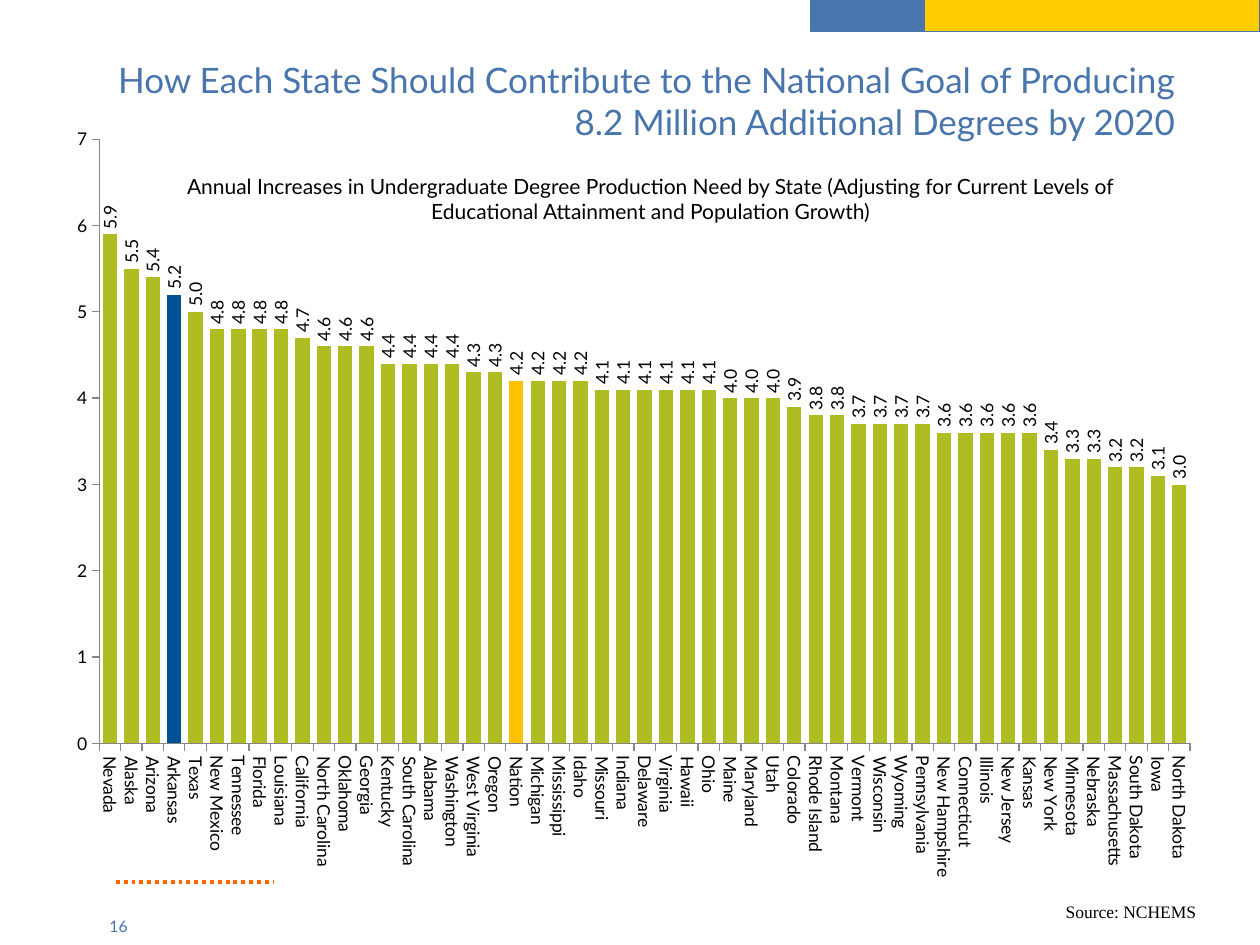
from lxml.etree import SubElement
from pptx import Presentation
from pptx.chart.data import CategoryChartData
from pptx.dml.color import RGBColor
from pptx.enum.chart import XL_CHART_TYPE, XL_LABEL_POSITION, XL_TICK_MARK
from pptx.enum.dml import MSO_LINE
from pptx.enum.shapes import MSO_CONNECTOR, MSO_SHAPE
from pptx.enum.text import MSO_ANCHOR, MSO_AUTO_SIZE, PP_ALIGN
from pptx.oxml import parse_xml
from pptx.oxml.ns import nsdecls, qn
from pptx.util import Inches, Pt

COLORS = {
    "blue": "4975AD",
    "yellow": "FFCC00",
    "orange": "FF6600",
    "green": "AFBD22",
    "arkansas": "005295",
    "nation": "FFC000",
    "axis": "868686",
    "black": "000000",
    "white": "FFFFFF",
}
STATES_BY_INCREASE = {
    5.9: "Nevada",
    5.5: "Alaska",
    5.4: "Arizona",
    5.2: "Arkansas",
    5.0: "Texas",
    4.8: "New Mexico,Tennessee,Florida,Louisiana",
    4.7: "California",
    4.6: "North Carolina,Oklahoma,Georgia",
    4.4: "Kentucky,South Carolina,Alabama,Washington",
    4.3: "West Virginia,Oregon",
    4.2: "Nation,Michigan,Mississippi,Idaho",
    4.1: "Missouri,Indiana,Delaware,Virginia,Hawaii,Ohio",
    4.0: "Maine,Maryland,Utah",
    3.9: "Colorado",
    3.8: "Rhode Island,Montana",
    3.7: "Vermont,Wisconsin,Wyoming,Pennsylvania",
    3.6: "New Hampshire,Connecticut,Illinois,New Jersey,Kansas",
    3.4: "New York",
    3.3: "Minnesota,Nebraska",
    3.2: "Massachusetts,South Dakota",
    3.1: "Iowa",
    3.0: "North Dakota",
}
PLOT_LAYOUT = {"x": 0.04, "y": 0.03, "w": 0.94, "h": 0.78}


def rgb(name):
    """Return the named palette colour."""
    return RGBColor.from_string(COLORS[name])


def set_text(frame, text, size, color="black", font="Lato", align=PP_ALIGN.LEFT,
             anchor=MSO_ANCHOR.TOP, fit=MSO_AUTO_SIZE.NONE):
    """Write one formatted paragraph into a text frame."""
    frame.word_wrap = True
    frame.auto_size = fit
    frame.vertical_anchor = anchor
    paragraph = frame.paragraphs[0]
    paragraph.text = text
    paragraph.alignment = align
    for run in paragraph.runs:
        run.font.name = font
        run.font.size = Pt(size)
        run.font.color.rgb = rgb(color)


def add_text(slide, box, text, size, **style):
    """Add a text box at the given box."""
    label = slide.shapes.add_textbox(*map(Inches, box))
    set_text(label.text_frame, text, size, **style)


def add_title(slide, box, text):
    """Place and format the title placeholder in front of the chart."""
    title = slide.shapes.title
    title.left, title.top, title.width, title.height = map(Inches, box)
    set_text(title.text_frame, text, 20, color="blue",
             align=PP_ALIGN.RIGHT, anchor=MSO_ANCHOR.MIDDLE)
    title.element.getparent().append(title.element)


def add_header_bar(slide, box, split):
    """Draw the two-colour bar, changing colour at the given offset."""
    left, top, width, height = box
    for color, start, length in (("blue", left, split),
                                 ("yellow", left + split, width - split)):
        band = slide.shapes.add_shape(
            MSO_SHAPE.RECTANGLE, *map(Inches, (start, top, length, height)))
        band.shadow.inherit = False
        band.fill.solid()
        band.fill.fore_color.rgb = rgb(color)
        band.line.color.rgb = rgb("blue")
        band.line.width = Pt(0.75)


def add_dotted_rule(slide, box):
    """Draw the dotted footer rule along the top of its box."""
    left, top, width, _ = box
    rule = slide.shapes.add_connector(
        MSO_CONNECTOR.STRAIGHT, *map(Inches, (left, top, left + width, top)))
    rule.line.color.rgb = rgb("orange")
    rule.line.width = Pt(2.25)
    rule.line.dash_style = MSO_LINE.ROUND_DOT
    SubElement(rule.element.spPr, qn("a:effectLst"))


def rotate_text(element, degrees):
    """Rotate the text of a chart axis or its data labels."""
    body = element.find(qn("c:txPr")).find(qn("a:bodyPr"))
    body.set("rot", str(degrees * 60000))
    body.set("vert", "horz")


def set_plot_layout(plot_area):
    """Fix the inner plot area as fractions of the chart."""
    for old in plot_area.findall(qn("c:layout")):
        plot_area.remove(old)
    sizes = "".join(f'<c:{side} val="{value}"/>' for side, value in PLOT_LAYOUT.items())
    plot_area.insert(0, parse_xml(
        f'<c:layout {nsdecls("c")}><c:manualLayout><c:layoutTarget val="inner"/>'
        f'<c:xMode val="edge"/><c:yMode val="edge"/>{sizes}</c:manualLayout></c:layout>'))


def format_axes(chart):
    """Format both axes, with upright state names below the bars."""
    for axis in (chart.category_axis, chart.value_axis):
        axis.major_tick_mark = XL_TICK_MARK.OUTSIDE
        axis.minor_tick_mark = XL_TICK_MARK.NONE
        axis.format.line.color.rgb = rgb("axis")
        axis.tick_labels.font.size = Pt(10)
    rotate_text(chart.category_axis._element, 90)
    increases = chart.value_axis
    increases.minimum_scale, increases.maximum_scale = 0, 7
    increases.major_unit = 1
    increases.tick_labels.number_format = "0"
    increases.tick_labels.number_format_is_linked = False
    increases.major_gridlines.format.line.color.rgb = rgb("white")
    increases.major_gridlines.format.line.width = Pt(0.75)


def add_state_chart(slide, box):
    """Add the column chart of yearly increases by state."""
    increases = {state: value for value, names in STATES_BY_INCREASE.items()
                 for state in names.split(",")}
    states = list(increases)
    data = CategoryChartData()
    data.categories = states
    data.add_series("Series 1", increases.values())
    chart = slide.shapes.add_chart(
        XL_CHART_TYPE.COLUMN_CLUSTERED, *map(Inches, box), data).chart
    chart.has_legend = chart.has_title = False
    chart.font.name = "Lato"
    chart.font.size = Pt(10)
    chart.font.color.rgb = rgb("black")
    format_axes(chart)

    plot = chart.plots[0]
    plot.gap_width = 49
    plot.vary_by_categories = False
    columns = plot.series[0]
    columns.format.fill.solid()
    columns.format.fill.fore_color.rgb = rgb("green")
    for state in ("Arkansas", "Nation"):
        fill = columns.points[states.index(state)].format.fill
        fill.solid()
        fill.fore_color.rgb = rgb(state.lower())

    labels = columns.data_labels
    labels.show_value = True
    labels.number_format = "0.0"
    labels.number_format_is_linked = False
    labels.position = XL_LABEL_POSITION.OUTSIDE_END
    labels.font.size = Pt(10)
    rotate_text(labels._element, -90)
    set_plot_layout(plot._element.getparent())


def main():
    """Build and save the slide."""
    deck = Presentation()
    deck.slide_width, deck.slide_height = Inches(10), Inches(7.5)
    slide = deck.slides.add_slide(deck.slide_layouts[5])
    add_dotted_rule(slide, (0.92, 7, 1.25, 0))
    add_header_bar(slide, (6.43, -0.01, 3.57, 0.26), split=0.91)
    add_state_chart(slide, (0.42, 0.92, 9.21, 6.15))
    add_text(slide, (1, 1.33, 8.33, 0.5),
             "Annual Increases in Undergraduate Degree Production Need by State "
             "(Adjusting for Current Levels of Educational Attainment and Population Growth)",
             12, align=PP_ALIGN.CENTER, fit=MSO_AUTO_SIZE.SHAPE_TO_FIT_TEXT)
    add_text(slide, (7.42, 7.1, 2.17, 0.27), "Source: NCHEMS", 10, font="Times New Roman",
             align=PP_ALIGN.RIGHT, fit=MSO_AUTO_SIZE.SHAPE_TO_FIT_TEXT)
    add_title(slide, (0.5, 0.27, 9, 1.05),
              "How Each State Should Contribute to the National Goal of Producing \v"
              "8.2 Million Additional Degrees by 2020 ")
    add_text(slide, (0.77, 7.23, 1, 0.27), "16", 9, color="blue")
    deck.save("out.pptx")


if __name__ == "__main__":
    main()
